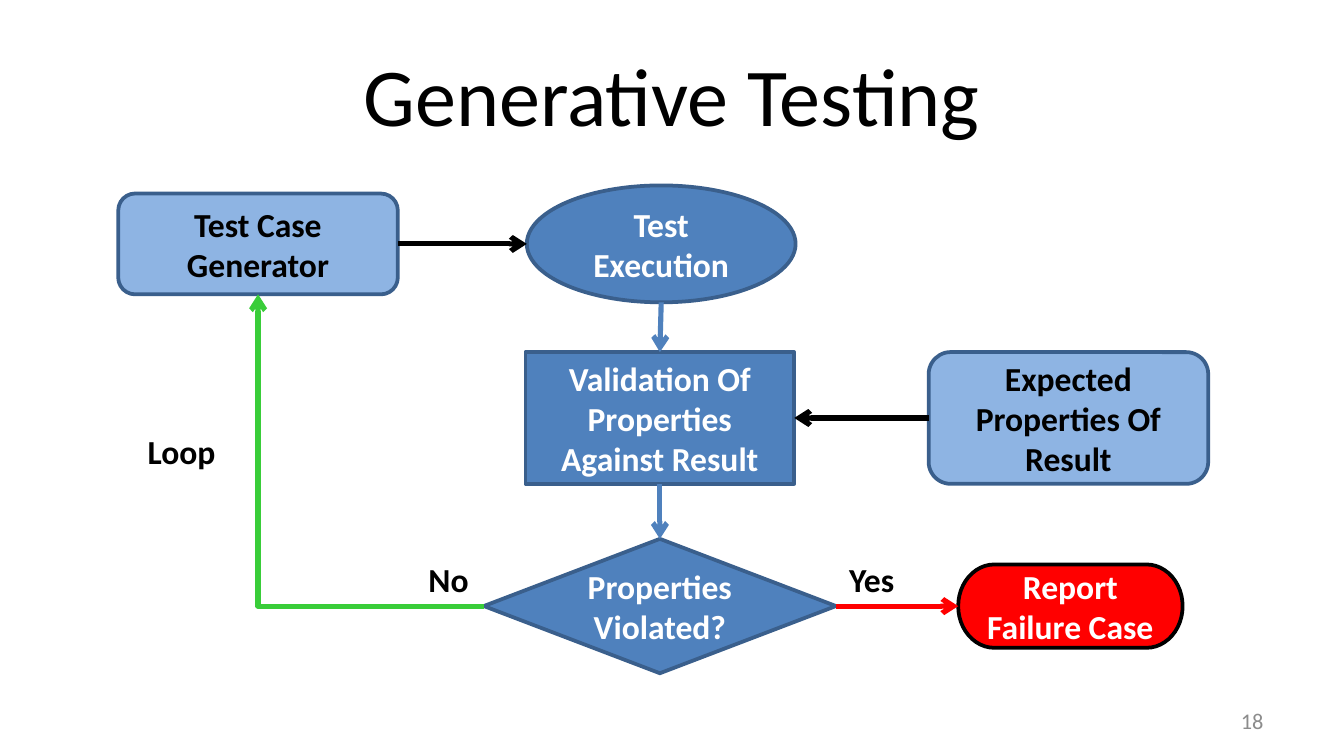
import pptx
import pptx.util
import pptx.dml.color
import pptx.enum.shapes
import pptx.enum.text
import pptx.oxml
import pptx.oxml.ns

Inches, Pt = pptx.util.Inches, pptx.util.Pt
SHAPE = pptx.enum.shapes.MSO_SHAPE
CONNECTOR = pptx.enum.shapes.MSO_CONNECTOR
ALIGN = pptx.enum.text.PP_ALIGN
ANCHOR = pptx.enum.text.MSO_ANCHOR

THEME = {
    "font": "Calibri", "title": 44, "body": 18, "small": 12,
    "outline": 2, "arrow": 2.75,
    "black": "000000", "white": "FFFFFF", "gray": "8C8C8C",
    "light": "8EB4E3", "blue": "4F81BD", "edge": "3A5F8C",
    "red": "FF0000", "green": "39CD39",
}

TITLE = ("Generative Testing", (0.5, 0.23, 9, 0.94))
PAGE_NUMBER = ("18", (7.17, 5.21, 2.33, 0.3))

STEPS = {
    "generator": ("Test Case\nGenerator", SHAPE.ROUNDED_RECTANGLE,
                  (0.88, 1.44, 2.08, 0.75), "light", "edge", "black"),
    "execution": ("Test\nExecution", SHAPE.OVAL,
                  (3.92, 1.38, 2, 0.87), "blue", "edge", "white"),
    "validation": ("Validation Of Properties Against Result", SHAPE.RECTANGLE,
                   (3.91, 2.62, 2, 0.98), "blue", "edge", "white"),
    "decision": ("Properties Violated?", SHAPE.FLOWCHART_DECISION,
                 (3.6, 4.01, 2.62, 1), "blue", "edge", "white"),
    "expected": ("Expected Properties Of Result", SHAPE.ROUNDED_RECTANGLE,
                 (6.91, 2.62, 2.08, 0.98), "light", "edge", "black"),
    "report": ("Report Failure Case", SHAPE.FLOWCHART_TERMINATOR,
               (7.13, 4.2, 1.67, 0.62), "red", "black", "white"),
}

FLOWS = [
    ("generator", "right", "execution", "left", "black"),
    ("expected", "left", "validation", "right", "black"),
    ("decision", "right", "report", "left", "red"),
    ("execution", "bottom", "validation", "top", "blue"),
    ("validation", "bottom", "decision", "top", "blue"),
]

LABELS = [
    ("Loop", (1, 3.16, 0.71, 0.4)),
    ("No", (3.09, 4.11, 0.5, 0.4)),
    ("Yes", (6.22, 4.11, 0.54, 0.4)),
]

SIDES = {"left": (0, 0.5), "right": (1, 0.5), "top": (0.5, 0), "bottom": (0.5, 1)}


def rgb(name):
    return pptx.dml.color.RGBColor.from_string(THEME[name])


def write(frame, text, size="body", color="black", bold=True,
          align=ALIGN.CENTER, anchor=ANCHOR.MIDDLE, wrap=True):
    frame.text = text
    frame.word_wrap = wrap
    frame.vertical_anchor = anchor
    for paragraph in frame.paragraphs:
        paragraph.alignment = align
        font = paragraph.runs[0].font
        font.name, font.size, font.bold = THEME["font"], Pt(THEME[size]), bold
        font.color.rgb = rgb(color)


def add_text(slide, text, box, **style):
    textbox = slide.shapes.add_textbox(*map(Inches, box))
    write(textbox.text_frame, text, **style)


def add_step(slide, text, kind, box, fill, edge, ink):
    step = slide.shapes.add_shape(kind, *map(Inches, box))
    step.shadow.inherit = False
    step.fill.solid()
    step.fill.fore_color.rgb = rgb(fill)
    step.line.color.rgb = rgb(edge)
    step.line.width = Pt(THEME["outline"])
    write(step.text_frame, text, color=ink)


def port(step, side):
    left, top, width, height = STEPS[step][2]
    across, down = SIDES[side]
    return Inches(left + across * width), Inches(top + down * height)


def add_arrow(slide, start, end, color, kind=CONNECTOR.STRAIGHT):
    arrow = slide.shapes.add_connector(kind, *start, *end)
    arrow.line.color.rgb = rgb(color)
    arrow.line.width = Pt(THEME["arrow"])
    head = pptx.oxml.parse_xml(
        f'<a:tailEnd {pptx.oxml.ns.nsdecls("a")} type="arrow"/>')
    arrow.line._get_or_add_ln().append(head)
    properties = arrow._element.spPr
    properties.append(pptx.oxml.parse_xml(
        f'<a:effectLst {pptx.oxml.ns.nsdecls("a")}/>'))
    return properties


def add_loop(slide):
    properties = add_arrow(slide, port("generator", "bottom"),
                           port("decision", "left"), "green", CONNECTOR.ELBOW)
    properties.find(pptx.oxml.ns.qn("a:prstGeom")).set("prst", "bentConnector2")
    properties.find(pptx.oxml.ns.qn("a:xfrm")).set("rot", str(180 * 60000))


def main():
    deck = pptx.Presentation()
    deck.slide_width = Inches(10)
    deck.slide_height = deck.slide_width * 9 // 16
    slide = deck.slides.add_slide(deck.slide_layouts[6])

    add_text(slide, *TITLE, size="title", bold=False)
    add_text(slide, *PAGE_NUMBER, size="small", color="gray", bold=False,
             align=ALIGN.RIGHT)
    for step in STEPS.values():
        add_step(slide, *step)
    add_loop(slide)
    for source, exit_side, target, entry_side, color in FLOWS:
        add_arrow(slide, port(source, exit_side), port(target, entry_side), color)
    for text, box in LABELS:
        add_text(slide, text, box, align=ALIGN.LEFT, anchor=ANCHOR.TOP, wrap=False)

    deck.save("out.pptx")


if __name__ == "__main__":
    main()
